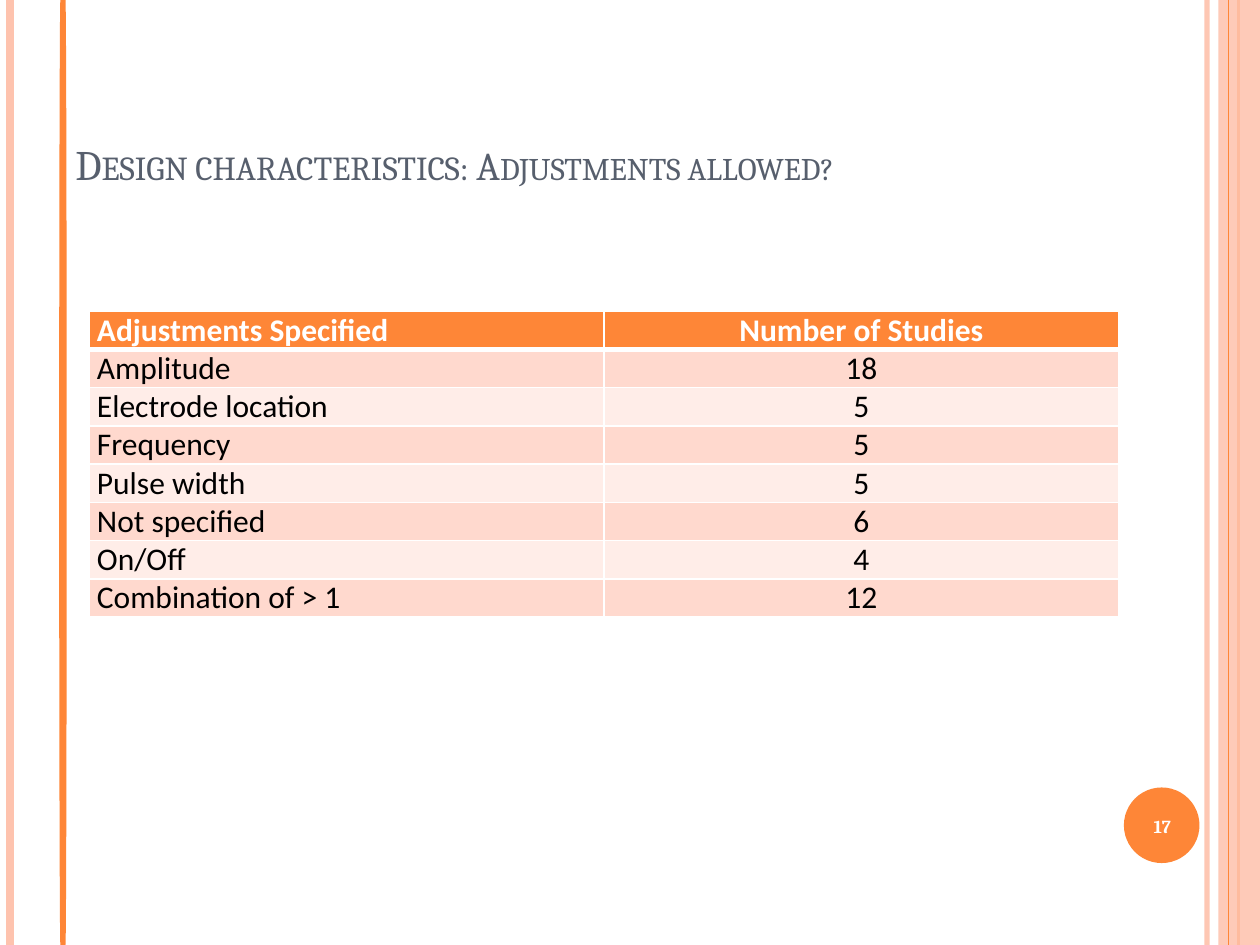
from typing import NamedTuple

from lxml.etree import SubElement
from pptx import Presentation
from pptx.dml.color import RGBColor
from pptx.enum.shapes import MSO_CONNECTOR, MSO_SHAPE
from pptx.enum.text import MSO_ANCHOR, PP_ALIGN
from pptx.oxml.ns import qn
from pptx.util import Inches, Pt

HUES = {
    "white": "FFFFFF", "black": "000000", "slate": "575F6D",
    "orange": "FE8637", "peach": "FEC3AE", "dark": "FFD9CE", "light": "FFEDE8",
}


class Rule(NamedTuple):
    x: float
    hue: str
    width: float
    alpha: int = 100


class Block(NamedTuple):
    kind: MSO_SHAPE
    box: tuple[float, float, float, float]
    hue: str
    alpha: int = 100


class Font(NamedTuple):
    name: str
    size: float
    hue: str
    bold: bool = False
    caps: bool = False


RULES = [Rule(9.58, "peach", 3, 93), Rule(0.08, "peach", 4.5), Rule(9.83, "orange", 1.5)]
BAND = Block(MSO_SHAPE.RECTANGLE, (9.67, 0, 0.33, 7.5), "peach", 87)
EDGE = Rule(9.75, "orange", 0.75)
BLOCKS = [
    Block(MSO_SHAPE.OVAL, (8.92, 6.25, 0.6, 0.6), "orange"),
    Block(MSO_SHAPE.FLOWCHART_TERMINATOR, (0.47, 0, 0.06, 7.5), "orange"),
]
ROWS = [
    ("Adjustments Specified", "Number of Studies"),
    ("Amplitude", "18"),
    ("Electrode location", "5"),
    ("Frequency", "5"),
    ("Pulse width", "5"),
    ("Not specified", "6"),
    ("On/Off", "4"),
    ("Combination of > 1", "12"),
]


def color(hue: str) -> RGBColor:
    return RGBColor.from_string(HUES[hue])


def fade(part, alpha: int) -> None:
    if alpha < 100:
        for node in part.iter(qn("a:srgbClr")):
            SubElement(node, qn("a:alpha"), val=str(alpha * 1000))


def draw_rule(slide, rule: Rule) -> None:
    x = Inches(rule.x)
    line = slide.shapes.add_connector(MSO_CONNECTOR.STRAIGHT, x, 0, x, Inches(7.5))
    line.line.color.rgb = color(rule.hue)
    line.line.width = Pt(rule.width)
    props = line._element.spPr
    fade(props, rule.alpha)
    SubElement(props, qn("a:effectLst"))


def draw_block(slide, block: Block) -> None:
    shape = slide.shapes.add_shape(block.kind, *map(Inches, block.box))
    shape.shadow.inherit = False
    shape.fill.solid()
    shape.fill.fore_color.rgb = color(block.hue)
    shape.line.fill.background()
    fade(shape._element.spPr, block.alpha)


def add_run(para, text: str, font: Font) -> None:
    run = para.add_run()
    run.text = text
    run.font.name = font.name
    run.font.size = Pt(font.size)
    run.font.bold = font.bold
    run.font.color.rgb = color(font.hue)
    if font.caps:
        run._r.get_or_add_rPr().set("cap", "small")


def add_text(slide, box: tuple, runs: list[tuple[str, Font]], anchor, align) -> None:
    frame = slide.shapes.add_textbox(*map(Inches, box)).text_frame
    frame.word_wrap = True
    frame.vertical_anchor = anchor
    para = frame.paragraphs[0]
    para.alignment = align
    for text, font in runs:
        add_run(para, text, font)


def set_edge(cell, side: str, width: float) -> None:
    edge = SubElement(cell._tc.get_or_add_tcPr(), qn(f"a:{side}"), w=str(Pt(width)))
    fill = SubElement(edge, qn("a:solidFill"))
    SubElement(fill, qn("a:srgbClr"), val=HUES["white"])


def fill_cell(cell, text: str, row: int, col: int) -> None:
    head = row == 0
    cell.margin_left = cell.margin_right = Inches(0.06)
    cell.margin_top = cell.margin_bottom = 0
    # Borders go before the fill; a thick one parts head and body
    for side in ("lnL", "lnR", "lnT", "lnB"):
        thick = (row, side) in ((0, "lnB"), (1, "lnT"))
        set_edge(cell, side, 3 if thick else 1)
    cell.fill.solid()
    cell.fill.fore_color.rgb = color("orange" if head else ("light", "dark")[row % 2])
    para = cell.text_frame.paragraphs[0]
    para.alignment = PP_ALIGN.CENTER if col else PP_ALIGN.LEFT
    add_run(para, text, Font("Calibri", 18, "white" if head else "black", head))


def draw_table(slide) -> None:
    box = map(Inches, (0.71, 2.47, 8.17, 2.43))
    table = slide.shapes.add_table(len(ROWS), 2, *box).table
    for r, texts in enumerate(ROWS):
        for c, text in enumerate(texts):
            fill_cell(table.cell(r, c), text, r, c)


def main() -> None:
    deck = Presentation()
    deck.slide_width, deck.slide_height = Inches(10), Inches(7.5)
    slide = deck.slides.add_slide(deck.slide_layouts[6])

    # Side stripes and number disc
    for rule in RULES:
        draw_rule(slide, rule)
    draw_block(slide, BAND)
    draw_rule(slide, EDGE)
    for block in BLOCKS:
        draw_block(slide, block)

    # Title
    title = [
        ("Design characteristics: ", Font("Cambria", 24, "slate", caps=True)),
        ("Adjustments allowed?", Font("Cambria", 22.5, "slate", caps=True)),
    ]
    add_text(slide, (0.5, 0.3, 8.17, 1.25), title, MSO_ANCHOR.BOTTOM, PP_ALIGN.LEFT)

    draw_table(slide)

    # Page number
    page = [("17", Font("Cambria", 10.5, "white", True))]
    add_text(slide, (8.89, 6.27, 0.67, 0.57), page, MSO_ANCHOR.MIDDLE, PP_ALIGN.CENTER)

    deck.save("out.pptx")


if __name__ == "__main__":
    main()
